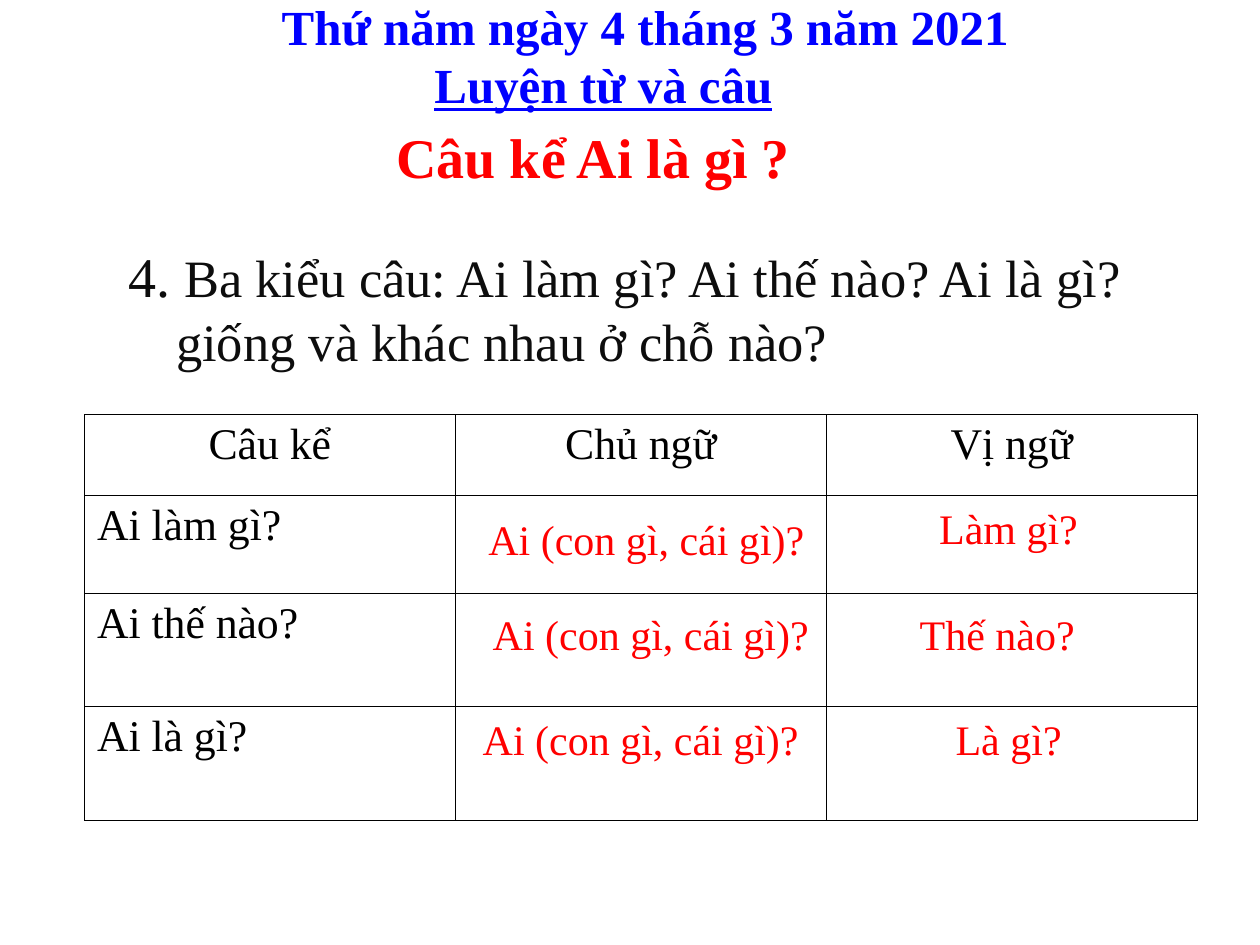
from lxml import etree
from pptx import Presentation
from pptx.dml.color import RGBColor
from pptx.enum.text import MSO_ANCHOR, MSO_AUTO_SIZE, PP_ALIGN
from pptx.oxml.ns import qn
from pptx.util import Inches, Pt

LEFT, CENTER = PP_ALIGN.LEFT, PP_ALIGN.CENTER
TOP = MSO_ANCHOR.TOP
NO_AUTOFIT = MSO_AUTO_SIZE.NONE
TITLE_ONLY = 5

THEME = {
    "font": "Times New Roman",
    "blue": RGBColor(0x00, 0x00, 0xFF),
    "red": RGBColor(0xFF, 0x00, 0x00),
    "ink": RGBColor(0x0D, 0x0D, 0x0D),
    "black": RGBColor(0x00, 0x00, 0x00),
    "heading": 28,
    "title": 32,
    "question": 30,
    "cell": 25,
    "answer": 24,
    "border": 0.5,
}

DATE = "Thứ năm ngày 4 tháng 3 năm 2021"
SUBJECT = "Luyện từ và câu"
TITLE = "Câu kể Ai là gì ?"
QUESTION_NUMBER = "4. "
QUESTION = "Ba kiểu câu: Ai làm gì? Ai thế nào? Ai là gì? giống và khác nhau ở chỗ nào?"

HEADERS = ["Câu kể", "Chủ ngữ", "Vị ngữ"]
SENTENCE_TYPES = ["Ai làm gì?", "Ai thế nào?", "Ai là gì?"]
TABLE_BOX = (0.67, 3.29, 8.83, 3.21)
ROW_HEIGHTS = [0.64, 0.78, 0.9, 0.9]

SUBJECT_ANSWER = "Ai (con gì, cái gì)?"
ANSWERS = [
    (SUBJECT_ANSWER, (3.67, 4.03, 2.92, 0.58)),
    (SUBJECT_ANSWER, (3.75, 4.78, 2.83, 0.58)),
    (SUBJECT_ANSWER, (3.67, 5.61, 2.83, 0.58)),
    ("Làm gì?", (6.67, 3.94, 2.67, 0.58)),
    ("Thế nào?", (6.58, 4.78, 2.67, 0.58)),
    ("Là gì?", (6.67, 5.61, 2.67, 0.58)),
]


def add_run(paragraph, text, size, color, bold=False, underline=False):
    run = paragraph.add_run()
    run.text = text
    font = run.font
    font.name = THEME["font"]
    font.size = Pt(THEME[size])
    font.color.rgb = THEME[color]
    font.bold = bold
    font.underline = underline


def indent(paragraph, margin, first_line=0):
    properties = paragraph._p.get_or_add_pPr()
    properties.set("marL", str(Inches(margin)))
    properties.set("indent", str(Inches(first_line)))


def add_text_frame(slide, box):
    shape = slide.shapes.add_textbox(*map(Inches, box))
    shape.text_frame.word_wrap = True
    return shape.text_frame


def add_borders(cell):
    properties = cell._tc.get_or_add_tcPr()
    for side in ("lnL", "lnR", "lnT", "lnB"):
        line = etree.SubElement(properties, qn(f"a:{side}"), w=str(Pt(THEME["border"])))
        fill = etree.SubElement(line, qn("a:solidFill"))
        etree.SubElement(fill, qn("a:srgbClr"), val=str(THEME["black"]))


def add_heading(slide):
    frame = add_text_frame(slide, (-0.33, -0.08, 10.9, 1.04))
    date = frame.paragraphs[0]
    date.alignment = CENTER
    add_run(date, DATE, "heading", "blue", bold=True)
    subject = frame.add_paragraph()
    indent(subject, 3.68)
    add_run(subject, SUBJECT, "heading", "blue", bold=True, underline=True)


def add_title(slide):
    title = slide.shapes.title
    title.left, title.top, title.width, title.height = map(Inches, (2.92, 0.92, 3.58, 0.42))
    frame = title.text_frame
    frame.word_wrap = True
    frame.auto_size = NO_AUTOFIT
    frame.vertical_anchor = TOP
    paragraph = frame.paragraphs[0]
    paragraph.alignment = CENTER
    add_run(paragraph, TITLE, "title", "red", bold=True)


def add_question(slide):
    paragraph = add_text_frame(slide, (0.92, 1.87, 8.42, 1.25)).paragraphs[0]
    indent(paragraph, 0.38, -0.38)
    paragraph.space_before = Pt(0.2 * THEME["question"])
    add_run(paragraph, QUESTION_NUMBER, "title", "ink")
    add_run(paragraph, QUESTION, "question", "ink")


def add_comparison_table(slide):
    rows = [HEADERS] + [[name, "", ""] for name in SENTENCE_TYPES]
    table = slide.shapes.add_table(len(rows), len(HEADERS), *map(Inches, TABLE_BOX)).table
    table.first_row = False
    table.horz_banding = False
    for row_index, texts in enumerate(rows):
        table.rows[row_index].height = Inches(ROW_HEIGHTS[row_index])
        for column_index, text in enumerate(texts):
            cell = table.cell(row_index, column_index)
            add_borders(cell)
            cell.fill.background()
            if text:
                paragraph = cell.text_frame.paragraphs[0]
                paragraph.alignment = CENTER if row_index == 0 else LEFT
                add_run(paragraph, text, "cell", "black")


def add_answers(slide):
    for text, box in ANSWERS:
        paragraph = add_text_frame(slide, box).paragraphs[0]
        paragraph.alignment = CENTER
        paragraph.space_before = Pt(0.2 * THEME["answer"])
        add_run(paragraph, text, "answer", "red")


def main():
    presentation = Presentation()
    presentation.slide_width = Inches(10)
    presentation.slide_height = Inches(7.5)
    slide = presentation.slides.add_slide(presentation.slide_layouts[TITLE_ONLY])
    add_heading(slide)
    add_title(slide)
    add_question(slide)
    add_comparison_table(slide)
    add_answers(slide)
    presentation.save("out.pptx")


if __name__ == "__main__":
    main()
